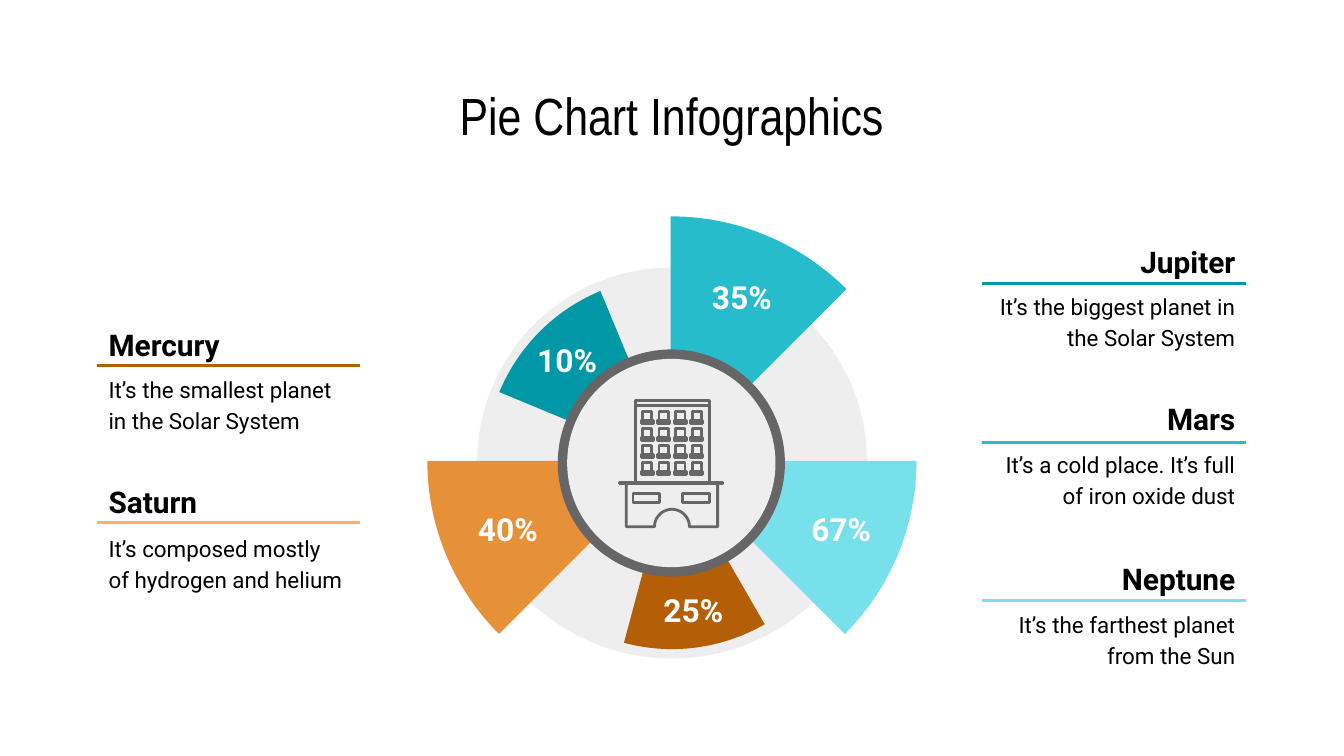
from math import cos, radians, sin

from lxml import etree
from pptx import Presentation
from pptx.dml.color import RGBColor
from pptx.enum.shapes import MSO_CONNECTOR, MSO_SHAPE
from pptx.enum.text import MSO_ANCHOR, PP_ALIGN
from pptx.oxml.ns import qn
from pptx.util import Inches, Pt

STRAIGHT = MSO_CONNECTOR.STRAIGHT
RECTANGLE, OVAL = MSO_SHAPE.RECTANGLE, MSO_SHAPE.OVAL
TOP, MIDDLE = MSO_ANCHOR.TOP, MSO_ANCHOR.MIDDLE
LEFT, CENTER, RIGHT = PP_ALIGN.LEFT, PP_ALIGN.CENTER, PP_ALIGN.RIGHT

BLACK = RGBColor(0x00, 0x00, 0x00)
WHITE = RGBColor(0xFF, 0xFF, 0xFF)
PALE = RGBColor(0xEE, 0xEE, 0xEE)
GREY = RGBColor(0x66, 0x66, 0x66)
TEAL = RGBColor(0x00, 0x97, 0xA7)
CYAN = RGBColor(0x26, 0xBC, 0xCC)
AQUA = RGBColor(0x78, 0xE0, 0xEA)
BROWN = RGBColor(0xB4, 0x5F, 0x06)
ORANGE = RGBColor(0xE6, 0x91, 0x38)
SAND = RGBColor(0xF6, 0xB2, 0x6B)

DISK = [(3.44, 1.45, 315), (3.44, 1.45, 270), (3.37, 1.53, 135),
        (3.37, 1.53, 180), (3.43, 1.45, 45)]

SLICES = [
    ("10%", TEAL, 5, 3.45, 0.72, 1.39, 292.5, 3.89, 2.55),
    ("35%", CYAN, 4.99, 3.46, 0, 1.85, 0, 5.19, 2.08),
    ("67%", AQUA, 5, 3.43, 0.72, 1.82, 90, 5.93, 3.81),
    ("25%", BROWN, 5, 3.45, 0, 1.38, 150, 4.83, 4.41),
    ("40%", ORANGE, 5, 3.43, 0.72, 1.82, 225, 3.45, 3.81),
]

PLANETS = [
    ("Mercury", "It’s the smallest planet in the Solar System",
     LEFT, 2.29, 2.67, 2.72, BROWN),
    ("Saturn", "It’s composed mostly of hydrogen and helium",
     LEFT, 3.46, 3.85, 3.89, SAND),
    ("Jupiter", "It’s the biggest planet in the Solar System",
     RIGHT, 1.67, 2.05, 2.11, TEAL),
    ("Mars", "It’s a cold place. It’s full of iron oxide dust",
     RIGHT, 2.84, 3.23, 3.29, CYAN),
    ("Neptune", "It’s the farthest planet from the Sun",
     RIGHT, 4.03, 4.42, 4.47, AQUA),
]

ICON_PARTS = [
    (4.71, 3.67, 0.2, 0.07), (5.08, 3.67, 0.2, 0.07), (4.73, 2.98, 0.55, 0.04),
    (4.61, 3.59, 0.77, 0.01), (4.73, 3.02, 0.55, 0.57),
]


def arc(x, y, radius, start, sweep, steps=30):
    """Return points on an arc, with angles clockwise from the top."""
    angles = [radians(start + sweep * step / steps) for step in range(steps + 1)]
    return [(x + radius * sin(angle), y - radius * cos(angle)) for angle in angles]


class Infographic:
    """Holds the style and the slide, and draws each kind of element."""

    body_font = "Roboto"
    title_font = "Arial Narrow"
    line_width = Pt(1.5)

    def __init__(self, slide):
        self.slide = slide

    def paint(self, shape, fill=None, line=None):
        shape.shadow.inherit = False
        if fill is None:
            shape.fill.background()
        else:
            shape.fill.solid()
            shape.fill.fore_color.rgb = fill
        if line is None:
            shape.line.fill.background()
        else:
            shape.line.color.rgb = line
            shape.line.width = self.line_width

    def shape(self, kind, left, top, width, height, fill=None, line=None):
        shape = self.slide.shapes.add_shape(
            kind, Inches(left), Inches(top), Inches(width), Inches(height))
        self.paint(shape, fill, line)

    def outline(self, points, fill=None, line=None):
        corners = [(Inches(x), Inches(y)) for x, y in points]
        builder = self.slide.shapes.build_freeform(*corners[0])
        builder.add_line_segments(corners[1:], close=True)
        self.paint(builder.convert_to_shape(), fill, line)

    def sector(self, x, y, inner, outer, start, fill):
        hole = arc(x, y, inner, start + 45, -45) if inner else [(x, y)]
        self.outline(arc(x, y, outer, start, 45) + hole, fill)

    def text(self, words, left, top, width, height, size, color=BLACK, bold=False,
             align=CENTER, anchor=MIDDLE, spacing=1.0, font=body_font):
        box = self.slide.shapes.add_textbox(
            Inches(left), Inches(top), Inches(width), Inches(height))
        frame = box.text_frame
        frame.word_wrap = True
        frame.vertical_anchor = anchor
        frame.margin_left = frame.margin_right = Inches(0.1)
        frame.margin_top = frame.margin_bottom = Inches(0.1)
        para = frame.paragraphs[0]
        para.alignment = align
        para.line_spacing = spacing
        span = para.add_run()
        span.text = words
        span.font.name = font
        span.font.size = Pt(size)
        span.font.bold = bold
        span.font.color.rgb = color

    def rule(self, left, right, y, color):
        rule = self.slide.shapes.add_connector(
            STRAIGHT, Inches(left), Inches(y), Inches(right), Inches(y))
        rule.line.color.rgb = color
        rule.line.width = self.line_width
        etree.SubElement(rule._element.spPr, qn("a:effectLst"))

    def planet(self, name, fact, align, name_top, fact_top, rule_y, color):
        on_left = align == LEFT
        self.text(name, 0.71 if on_left else 7.21, name_top, 2.08, 0.52, 16,
                  bold=True, align=align, anchor=TOP, spacing=1.15)
        self.text(fact, 0.71 if on_left else 7.33, fact_top, 1.96, 0.62, 12,
                  align=align, anchor=TOP, spacing=1.15)
        start = 0.72 if on_left else 7.31
        self.rule(start, start + 1.96, rule_y, color)

    def building(self):
        arch = arc(5, 3.92, 0.13, 270, 180)
        self.outline([(4.66, 3.59), (4.66, 3.92), *arch, (5.34, 3.92), (5.34, 3.59)],
                     line=GREY)
        for part in ICON_PARTS:
            self.shape(RECTANGLE, *part, line=GREY)
        for row in range(4):
            for column in range(4):
                x, y = 4.78 + column * 0.37 / 3, 3.06 + row * 0.38 / 3
                self.shape(RECTANGLE, x, y, 0.07, 0.07, line=GREY)
                self.shape(RECTANGLE, x - 0.01, y + 0.07, 0.09, 0.02, line=GREY)


def main():
    deck = Presentation()
    deck.slide_width = Inches(10)
    deck.slide_height = deck.slide_width * 9 // 16
    page = Infographic(deck.slides.add_slide(deck.slide_layouts[6]))

    page.text("Pie Chart Infographics", 3.12, 0.59, 3.75, 0.53, 28,
              font=page.title_font)
    for y, radius, start in DISK:
        page.sector(5, y, 0, radius, start, PALE)
    for label, color, x, y, inner, outer, start, left, top in SLICES:
        page.sector(x, y, inner, outer, start, color)
        page.text(label, left, top, 0.66, 0.25, 17, WHITE, bold=True)
    page.shape(OVAL, 4.15, 2.6, 1.69, 1.69, GREY)
    page.shape(OVAL, 4.22, 2.67, 1.55, 1.55, PALE)
    page.building()
    for planet in PLANETS:
        page.planet(*planet)

    deck.save("out.pptx")


if __name__ == "__main__":
    main()
